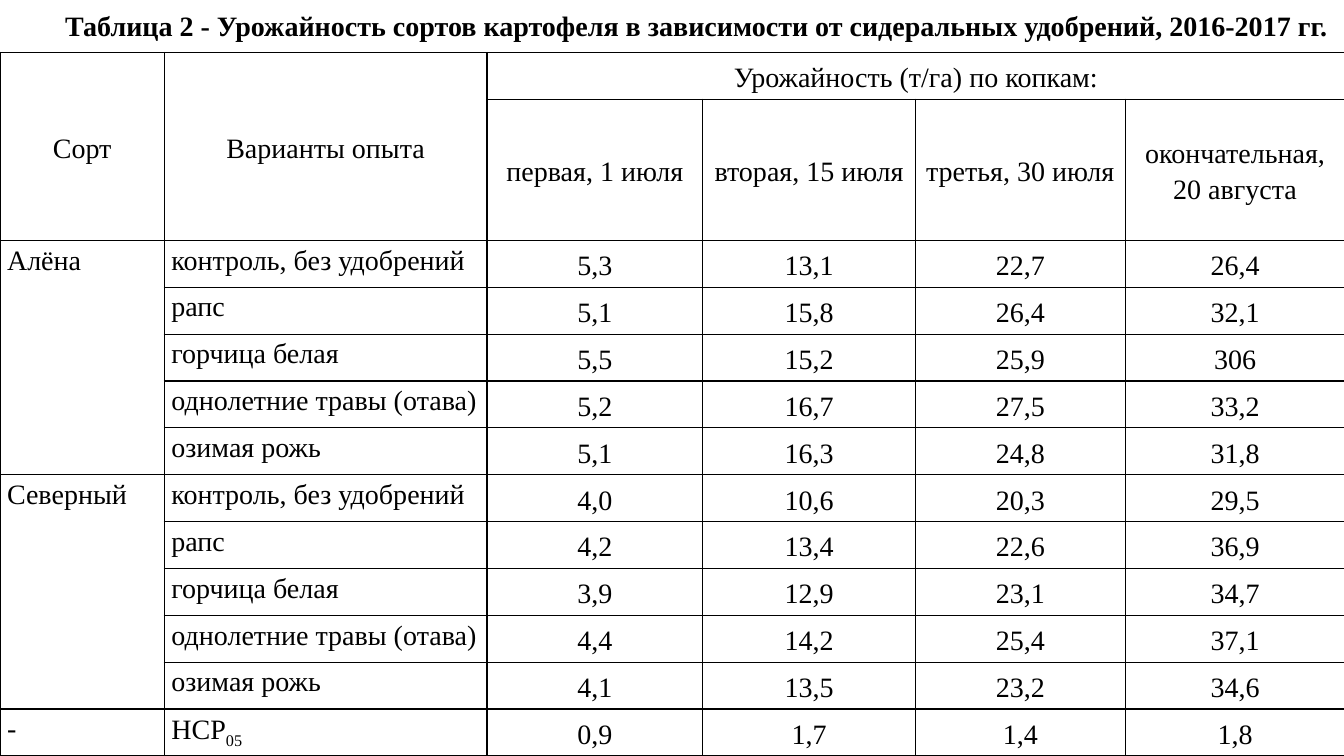
from lxml.etree import SubElement
from pptx import Presentation
from pptx.dml.color import RGBColor
from pptx.enum.text import MSO_ANCHOR, MSO_AUTO_SIZE, PP_ALIGN
from pptx.oxml.ns import qn
from pptx.util import Inches, Pt

COLORS = {"ink": "000000"}
TITLE = ("Таблица 2 - Урожайность сортов картофеля в зависимости "
         "от сидеральных удобрений, 2016-2017 гг.")
WIDTHS = [1.63, 3.2, 2.14, 2.11, 2.08, 2.18]
TOTAL, TALL = 6.98, 1.4

HEAD = [
    ["Сорт", "Варианты опыта", "Урожайность (т/га) по копкам:", "", "", ""],
    ["", "", "первая, 1 июля", "вторая, 15 июля", "третья, 30 июля",
     "окончательная, 20 августа"],
]
PLOTS = ["контроль, без удобрений", "рапс", "горчица белая",
         "однолетние травы (отава)", "озимая рожь"]
YIELDS = {
    "Алёна": ["5,3 13,1 22,7 26,4", "5,1 15,8 26,4 32,1", "5,5 15,2 25,9 306",
              "5,2 16,7 27,5 33,2", "5,1 16,3 24,8 31,8"],
    "Северный": ["4,0 10,6 20,3 29,5", "4,2 13,4 22,6 36,9", "3,9 12,9 23,1 34,7",
                 "4,4 14,2 25,4 37,1", "4,1 13,5 23,2 34,6"],
}
LAST = ["-", "НСР", "0,9", "1,7", "1,4", "1,8"]
# Top row, left column, bottom row, right column
SPANS = [(0, 0, 1, 0), (0, 1, 1, 1), (0, 2, 0, 5), (2, 0, 6, 0), (7, 0, 11, 0)]


class Sheet:
    def __init__(self, slide, font="Times New Roman", size=20):
        self.slide, self.font, self.size = slide, font, size

    def style(self, run, bold=False):
        font = run.font
        font.name, font.size, font.bold = self.font, Pt(self.size), bold
        font.color.rgb = RGBColor.from_string(COLORS["ink"])

    def title(self, text, left, top, width, height):
        box = self.slide.shapes.add_textbox(
            Inches(left), Inches(top), Inches(width), Inches(height))
        frame = box.text_frame
        frame.text = text
        frame.word_wrap = False
        frame.auto_size = MSO_AUTO_SIZE.SHAPE_TO_FIT_TEXT
        frame.vertical_anchor = MSO_ANCHOR.MIDDLE
        para = frame.paragraphs[0]
        para.alignment = PP_ALIGN.CENTER
        props = para._p.get_or_add_pPr()
        props.set("marL", "0")
        props.set("indent", str(Inches(0.49)))
        self.style(para.runs[0], bold=True)

    def border(self, cell):
        props = cell._tc.get_or_add_tcPr()
        for side in ("lnL", "lnR", "lnT", "lnB"):
            line = SubElement(props, qn("a:" + side), w=str(Pt(1)))
            fill = SubElement(line, qn("a:solidFill"))
            SubElement(fill, qn("a:srgbClr"), val=COLORS["ink"])

    def cell(self, cell, text, center):
        self.border(cell)
        cell.fill.background()
        cell.margin_left = cell.margin_right = Inches(0.07)
        cell.margin_top = cell.margin_bottom = 0
        cell.vertical_anchor = MSO_ANCHOR.MIDDLE if center else MSO_ANCHOR.TOP
        cell.text_frame.text = text
        para = cell.text_frame.paragraphs[0]
        para.alignment = PP_ALIGN.CENTER if center else PP_ALIGN.LEFT
        para.line_spacing = 1.15
        for run in para.runs:
            self.style(run)

    def table(self, rows, widths, heights, left, top):
        grid = self.slide.shapes.add_table(
            len(rows), len(widths), Inches(left), Inches(top),
            Inches(sum(widths)), Inches(sum(heights))).table
        grid.first_row = grid.horz_banding = False
        for col, width in zip(grid.columns, widths):
            col.width = Inches(width)
        for row, height in zip(grid.rows, heights):
            row.height = Inches(height)
        for r, row in enumerate(rows):
            for c, text in enumerate(row):
                self.cell(grid.cell(r, c), text, center=r < 2 or c > 1)
        return grid

    def lower(self, cell, text):
        run = cell.text_frame.paragraphs[0].add_run()
        run.text = text
        self.style(run)
        run._r.get_or_add_rPr().set("baseline", "-25000")


def main():
    deck = Presentation()
    deck.slide_width, deck.slide_height = Inches(13.33), Inches(7.5)
    sheet = Sheet(deck.slides.add_slide(deck.slide_layouts[6]))

    # Yield table
    rows = list(HEAD)
    for sort, lines in YIELDS.items():
        for n, (plot, line) in enumerate(zip(PLOTS, lines)):
            rows.append([sort if n == 0 else "", plot, *line.split()])
    rows.append(LAST)
    heights = [(TOTAL - TALL) / (len(rows) - 1)] * len(rows)
    heights[1] = TALL
    grid = sheet.table(rows, WIDTHS, heights, 0, 0.52)
    sheet.lower(grid.cell(len(rows) - 1, 1), "05")
    for top, left, low, right in SPANS:
        grid.cell(top, left).merge(grid.cell(low, right))

    # Title
    sheet.title(TITLE, 0.05, 0.03, 13.23, 0.44)
    deck.save("out.pptx")


if __name__ == "__main__":
    main()
